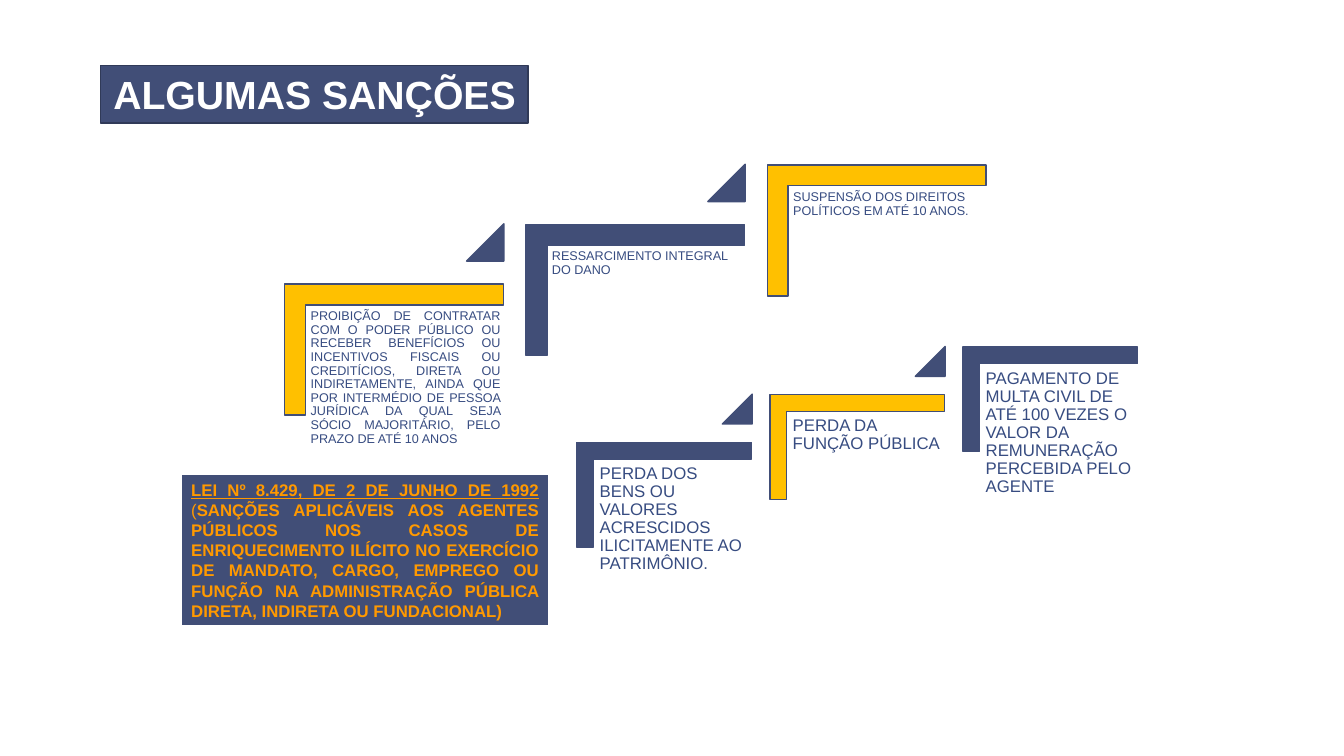
from pptx import Presentation
from pptx.dml.color import RGBColor
from pptx.enum.shapes import MSO_SHAPE
from pptx.enum.text import MSO_ANCHOR, MSO_AUTO_SIZE, PP_ALIGN
from pptx.util import Cm, Pt

NAVY = RGBColor(0x41, 0x4E, 0x77)
DARK_NAVY = RGBColor(0x30, 0x3A, 0x58)
TEXT_BLUE = RGBColor(0x37, 0x4C, 0x81)
GOLD = RGBColor(0xFF, 0xC0, 0x00)
ORANGE = RGBColor(0xFF, 0x99, 0x00)
WHITE = RGBColor(0xFF, 0xFF, 0xFF)


def add_run(p, text, size, color, bold=False, underline=False):
    r = p.add_run()
    r.text = text
    r.font.name = "Arial"
    r.font.size = Pt(size)
    r.font.color.rgb = color
    r.font.bold = bold
    r.font.underline = underline


def add_filled(kind, left, top, width, height, fill, line=NAVY, weight=1):
    sp = slide.shapes.add_shape(kind, Cm(left), Cm(top), Cm(width), Cm(height))
    sp.shadow.inherit = False
    sp.fill.solid()
    sp.fill.fore_color.rgb = fill
    sp.line.color.rgb = line
    sp.line.width = Pt(weight)
    return sp


prs = Presentation()
prs.slide_width = Cm(33.87)
prs.slide_height = Cm(19.05)
slide = prs.slides.add_slide(prs.slide_layouts[5])

# Title
title = slide.shapes.title
title.left, title.top, title.width, title.height = Cm(2.54), Cm(1.65), Cm(10.77), Cm(1.45)
title.fill.solid()
title.fill.fore_color.rgb = NAVY
title.line.color.rgb = DARK_NAVY
title.line.width = Pt(1)
tf = title.text_frame
tf.auto_size = MSO_AUTO_SIZE.NONE
tf.word_wrap = False
tf.vertical_anchor = MSO_ANCHOR.MIDDLE
add_run(tf.paragraphs[0], "ALGUMAS SANÇÕES", 28, WHITE, bold=True)

# Two rising staircases: left, top, scale, text size, steps
staircases = [
    (8.28, 6.05, 1, 9, [
        "PROIBIÇÃO DE CONTRATAR COM O PODER PÚBLICO OU RECEBER BENEFÍCIOS OU "
        "INCENTIVOS FISCAIS OU CREDITÍCIOS, DIRETA OU INDIRETAMENTE, AINDA QUE "
        "POR INTERMÉDIO DE PESSOA JURÍDICA DA QUAL SEJA SÓCIO MAJORITÁRIO, PELO "
        "PRAZO DE ATÉ 10 ANOS",
        "RESSARCIMENTO INTEGRAL DO DANO",
        "SUSPENSÃO DOS DIREITOS POLÍTICOS EM ATÉ 10 ANOS.",
    ]),
    (15.42, 10.26, 0.8, 12, [
        "PERDA DOS BENS OU VALORES ACRESCIDOS ILICITAMENTE AO PATRIMÔNIO.",
        "PERDA DA FUNÇÃO PÚBLICA",
        "PAGAMENTO DE MULTA CIVIL DE ATÉ 100 VEZES O VALOR DA REMUNERAÇÃO "
        "PERCEBIDA PELO AGENTE",
    ]),
]
fills = [[GOLD, NAVY, GOLD], [NAVY, GOLD, NAVY]]

for (left, top, scale, size, steps), colors in zip(staircases, fills):
    for i, (text, color) in enumerate(zip(steps, colors)):
        x = left + 6.08 * scale * i
        y = top - 1.5 * scale * i
        corner = add_filled(MSO_SHAPE.CORNER, x, y, 3.3 * scale, 5.51 * scale, color)
        corner.rotation = 90
        corner.adjustments[0] = corner.adjustments[1] = 0.16

        box = slide.shapes.add_textbox(Cm(x - 0.55 * scale), Cm(y + 1.65 * scale),
                                       Cm(4.98 * scale), Cm(4.37 * scale))
        tf = box.text_frame
        tf.word_wrap = True
        inset = Cm(size / 90)
        tf.margin_left = tf.margin_right = tf.margin_top = tf.margin_bottom = inset
        p = tf.paragraphs[0]
        p.line_spacing = 0.9
        p.alignment = PP_ALIGN.JUSTIFY if text.startswith("PROIBIÇÃO") else PP_ALIGN.LEFT
        add_run(p, text, size, TEXT_BLUE)

        if i < len(steps) - 1:
            triangle = add_filled(MSO_SHAPE.ISOSCELES_TRIANGLE, x + 3.48 * scale,
                                  y - 0.41 * scale, 0.94 * scale, 0.94 * scale, NAVY)
            triangle.adjustments[0] = 1

# Law
law = add_filled(MSO_SHAPE.RECTANGLE, 4.57, 11.94, 9.27, 3.84, NAVY, WHITE, 1.5)
tf = law.text_frame
tf.word_wrap = True
tf.vertical_anchor = MSO_ANCHOR.MIDDLE
p = tf.paragraphs[0]
p.alignment = PP_ALIGN.JUSTIFY
add_run(p, "LEI Nº 8.429, DE 2 DE JUNHO DE 1992", 12, ORANGE, bold=True, underline=True)
add_run(p, " (", 12, ORANGE)
add_run(p, "SANÇÕES APLICÁVEIS AOS AGENTES PÚBLICOS NOS CASOS DE ENRIQUECIMENTO "
        "ILÍCITO NO EXERCÍCIO DE MANDATO, CARGO, EMPREGO OU FUNÇÃO NA ADMINISTRAÇÃO "
        "PÚBLICA DIRETA, INDIRETA OU FUNDACIONAL)", 12, ORANGE, bold=True)

prs.save("out.pptx")
